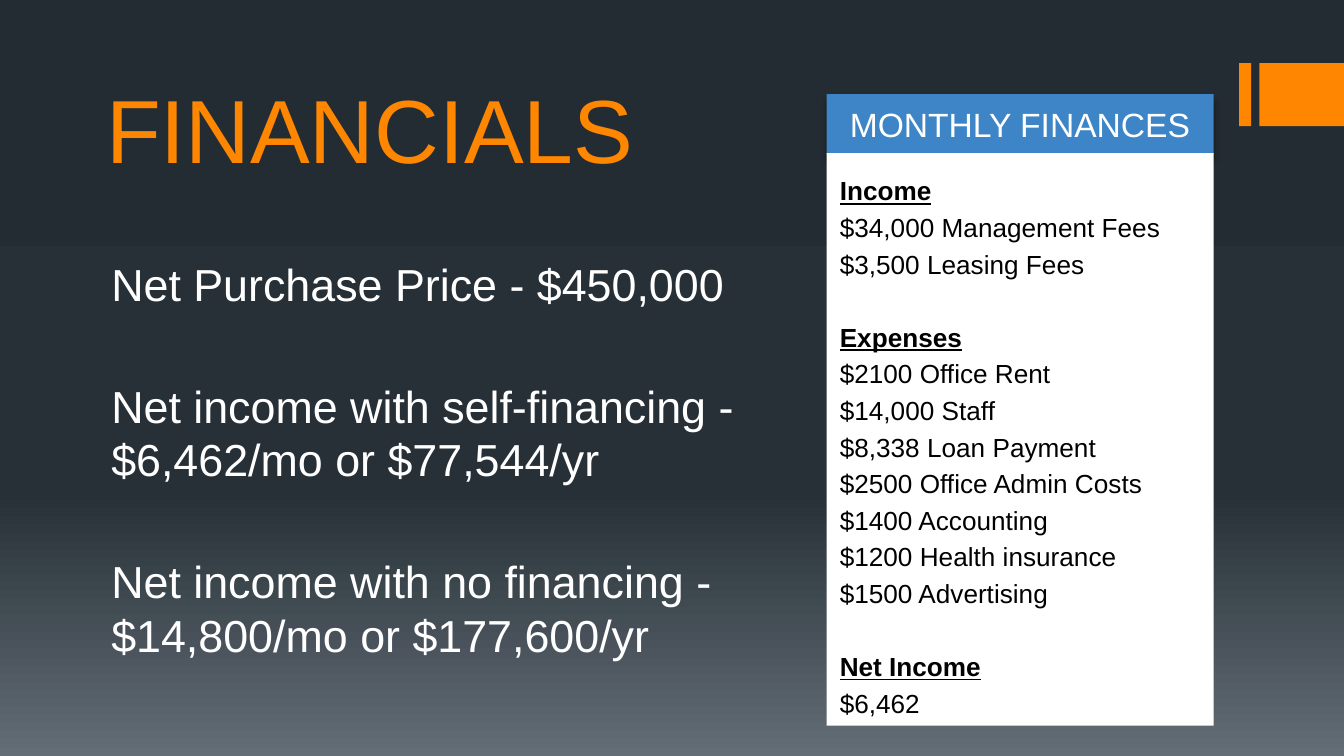
from copy import deepcopy
from dataclasses import dataclass

from lxml import etree
from pptx import Presentation
from pptx.dml.color import RGBColor
from pptx.enum.shapes import MSO_SHAPE
from pptx.enum.text import MSO_ANCHOR, PP_ALIGN
from pptx.oxml.ns import qn
from pptx.util import Inches, Pt

RECT = MSO_SHAPE.RECTANGLE
TOP, MIDDLE, BOTTOM = MSO_ANCHOR.TOP, MSO_ANCHOR.MIDDLE, MSO_ANCHOR.BOTTOM
LEFT, CENTER = PP_ALIGN.LEFT, PP_ALIGN.CENTER


@dataclass(frozen=True)
class Theme:
    """Colours, font and type sizes of the slide."""
    font: str = "Arial"
    accent: str = "FF8600"
    header: str = "3D85C6"
    white: str = "FFFFFF"
    black: str = "000000"
    backdrop: tuple = ((0, "242C33"), (0.65, "273037"), (1, "636D76"))
    title_size: int = 48
    body_size: int = 24
    header_size: int = 18
    item_size: int = 14


THEME = Theme()

KEY_FIGURES = [
    "Net Purchase Price - $450,000",
    "Net income with self-financing - $6,462/mo or $77,544/yr",
    "Net income with no financing - $14,800/mo or $177,600/yr",
]
FINANCES = {
    "Income": ["$34,000 Management Fees", "$3,500 Leasing Fees"],
    "Expenses": [
        "$2100 Office Rent", "$14,000 Staff", "$8,338 Loan Payment",
        "$2500 Office Admin Costs", "$1400 Accounting",
        "$1200 Health insurance", "$1500 Advertising",
    ],
    "Net Income": ["$6,462"],
}


def rgb(color):
    """Turn a hex string into a colour."""
    return RGBColor.from_string(color)


def style_frame(tf, anchor):
    """Set wrapping and anchor of a text frame."""
    tf.word_wrap = True
    tf.vertical_anchor = anchor


def style_paragraph(p, size, color, align=LEFT, bold=False):
    """Format a paragraph and its runs, underlining bold headings."""
    p.alignment = align
    for r in p.runs:
        r.font.name = THEME.font
        r.font.size = Pt(size)
        r.font.color.rgb = rgb(color)
        r.font.bold = r.font.underline = bold


def add_block(s, x, y, w, h, color):
    """Add a plain filled rectangle."""
    sp = s.shapes.add_shape(RECT, Inches(x), Inches(y), Inches(w), Inches(h))
    sp.shadow.inherit = False
    sp.fill.solid()
    sp.fill.fore_color.rgb = rgb(color)
    sp.line.fill.background()
    return sp


def add_drop_shadow(sp):
    """Give a shape a soft shadow below it."""
    effects = sp.element.spPr.find(qn("a:effectLst"))
    shadow = etree.SubElement(
        effects, qn("a:outerShdw"), blurRad=str(Pt(3.8)), dist=str(Pt(3)),
        dir="5400000", algn="t", rotWithShape="0")
    color = etree.SubElement(shadow, qn("a:srgbClr"), val=THEME.black)
    etree.SubElement(color, qn("a:alpha"), val="48000")


def set_backdrop(s):
    """Fill the background with a vertical three-stop gradient."""
    fill = s.background.fill
    fill.gradient()
    fill.gradient_angle = 270
    stops = s.element.find(".//" + qn("a:gsLst"))
    stops.append(deepcopy(stops[-1]))
    for stop, (position, color) in zip(fill.gradient_stops, THEME.backdrop):
        stop.position = position
        stop.color.rgb = rgb(color)


def add_corner_tab(s, x, y, w, h):
    """Add the narrow and wide accent bars at the slide edge."""
    bar, gap = 0.09, 0.06
    add_block(s, x, y, bar, h, THEME.accent)
    add_block(s, x + bar + gap, y, w - bar - gap, h, THEME.accent)


def set_title(s, x, y, w, h, text):
    """Place and format the title placeholder."""
    sp = s.shapes.title
    sp.left, sp.top, sp.width, sp.height = map(Inches, (x, y, w, h))
    tf = sp.text_frame
    tf.text = text
    style_frame(tf, BOTTOM)
    style_paragraph(tf.paragraphs[0], THEME.title_size, THEME.accent)


def add_key_figures(s, x, y, w, h, figures):
    """Add the widely spaced statements."""
    sp = s.shapes.add_textbox(Inches(x), Inches(y), Inches(w), Inches(h))
    tf = sp.text_frame
    style_frame(tf, MIDDLE)
    tf.text = "\n".join(figures)
    for i, p in enumerate(tf.paragraphs):
        p.space_before = Pt(36.5 if i else 0)
        style_paragraph(p, THEME.body_size, THEME.white)


def add_finance_panel(s, x, y, w, h, heading, sections):
    """Add the headed panel with its sections of amounts."""
    head_h = 0.45
    head = add_block(s, x, y, w, head_h, THEME.header)
    add_drop_shadow(head)
    tf = head.text_frame
    tf.text = heading
    style_frame(tf, MIDDLE)
    style_paragraph(tf.paragraphs[0], THEME.header_size, THEME.white, CENTER)

    body_y = y + head_h - 0.01
    panel = add_block(s, x, body_y, w, y + h - body_y, THEME.white)
    tf = panel.text_frame
    style_frame(tf, TOP)
    tf.margin_top = Inches(0.16)
    tf.text = "\n".join(
        line for name, items in sections.items() for line in (name, *items))
    for i, p in enumerate(tf.paragraphs):
        is_heading = p.text in sections
        p.space_before = Pt(0 if i == 0 else 22.4 if is_heading else 2.8)
        style_paragraph(p, THEME.item_size, THEME.black, bold=is_heading)


def main():
    """Build and save the financials slide."""
    prs = Presentation()
    prs.slide_width = Inches(10)
    prs.slide_height = prs.slide_width * 9 // 16
    s = prs.slides.add_slide(prs.slide_layouts[5])
    set_backdrop(s)
    add_corner_tab(s, 9.22, 0.47, 0.78, 0.47)
    set_title(s, 0.69, 0.79, 4.52, 0.61, "FINANCIALS")
    add_key_figures(s, 0.73, 1.58, 5.03, 3.67, KEY_FIGURES)
    add_finance_panel(s, 6.15, 0.7, 2.88, 4.7, "MONTHLY FINANCES", FINANCES)
    prs.save("out.pptx")


if __name__ == "__main__":
    main()
